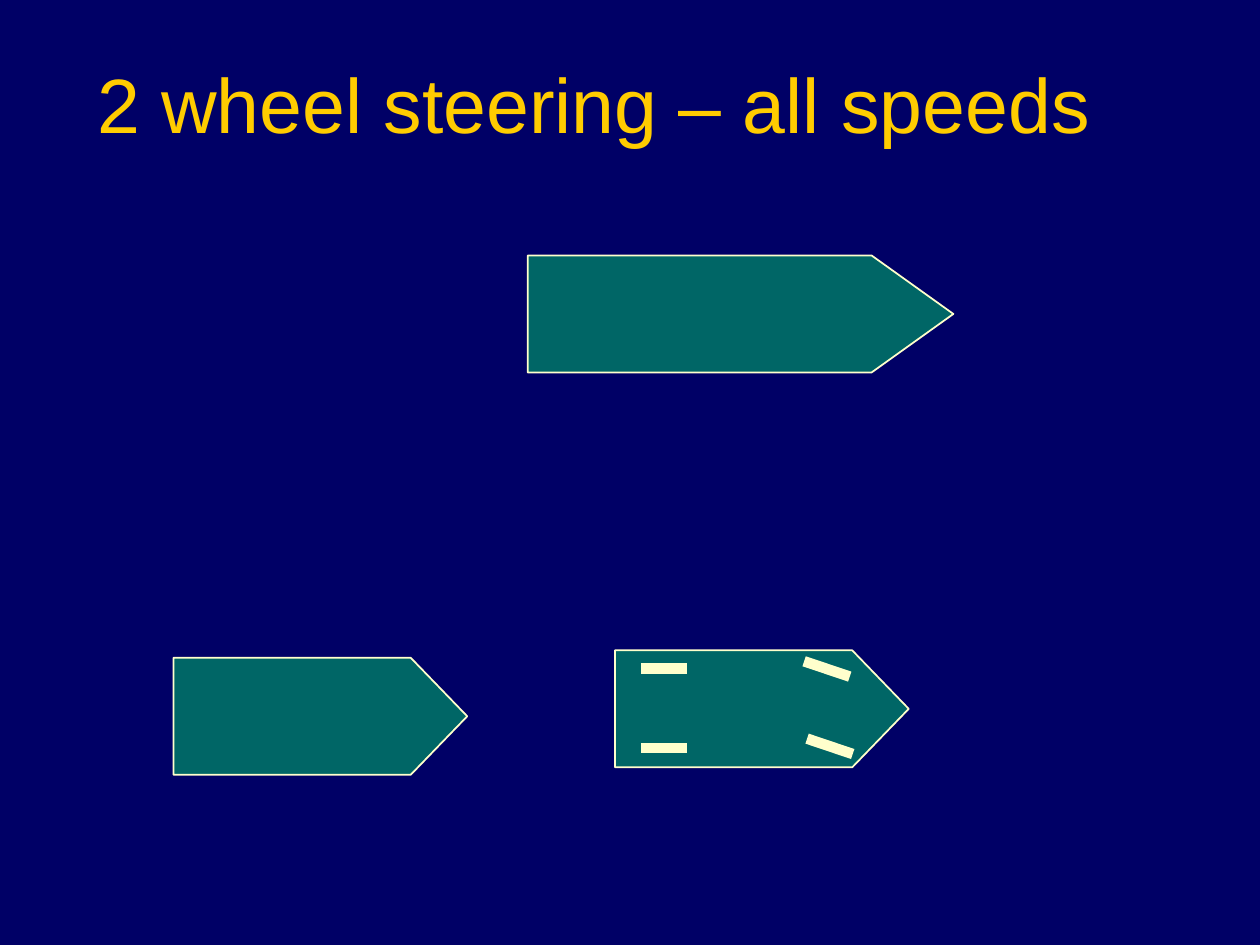
from lxml.etree import SubElement
from pptx import Presentation
from pptx.dml.color import RGBColor
from pptx.enum.shapes import MSO_CONNECTOR, MSO_SHAPE
from pptx.enum.text import MSO_ANCHOR, PP_ALIGN
from pptx.oxml import parse_xml
from pptx.oxml.ns import nsdecls, qn
from pptx.util import Cm, Pt

NAVY, TEAL, CREAM, GOLD = "000066", "006666", "FFFFCC", "FFCC00"
BODY_H = 2.36


def set_color(fill, value):
    fill.solid()
    fill.fore_color.rgb = RGBColor.from_string(value)


def add_title(s, text):
    title = s.shapes.title
    title.left, title.top, title.width, title.height = Cm(0), Cm(0.48), Cm(22.25), Cm(3.18)
    tf = title.text_frame
    tf.word_wrap = True
    tf.vertical_anchor = MSO_ANCHOR.MIDDLE
    p = tf.paragraphs[0]
    p.alignment = PP_ALIGN.RIGHT
    r = p.add_run()
    r.text = text
    r.font.size = Pt(44)
    r.font.name = "Arial"
    set_color(r.font.fill, GOLD)
    shadow = parse_xml(
        f'<a:effectLst {nsdecls("a")}><a:outerShdw dist="35921" dir="2700000">'
        '<a:srgbClr val="000000"/></a:outerShdw></a:effectLst>')
    r.font._element.find(qn("a:solidFill")).addnext(shadow)


def add_body(shapes, x, y, w, point):
    sp = shapes.add_shape(MSO_SHAPE.PENTAGON, Cm(x), Cm(y), Cm(w), Cm(BODY_H))
    sp.adjustments[0] = point
    sp.shadow.inherit = False
    set_color(sp.fill, TEAL)
    set_color(sp.line.fill, CREAM)
    sp.line.width = Pt(1)


def add_wheel(shapes, x, y, drop=0):
    wheel = shapes.add_connector(
        MSO_CONNECTOR.STRAIGHT, Cm(x), Cm(y), Cm(x + 0.92), Cm(y + drop))
    set_color(wheel.line.fill, CREAM)
    wheel.line.width = Pt(6)
    SubElement(wheel._element.spPr, qn("a:effectLst"))


def add_steered_car(s, x, y):
    car = s.shapes.add_group_shape().shapes
    add_body(car, x, y, 5.92, 0.483)
    for dx, dy, drop in ((0.52, 0.37, 0), (0.52, 1.97, 0),
                         (3.81, 0.22, 0.31), (3.87, 1.78, 0.31)):
        add_wheel(car, x + dx, y + dy, drop)


def main():
    prs = Presentation()
    prs.slide_width, prs.slide_height = Cm(25.4), Cm(19.05)
    s = prs.slides.add_slide(prs.slide_layouts[5])
    set_color(s.background.fill, NAVY)
    add_title(s, "2 wheel steering – all speeds")
    add_steered_car(s, 12.4, 13.11)
    add_body(s.shapes, 3.5, 13.26, 5.92, 0.483)
    add_body(s.shapes, 10.64, 5.15, 8.58, 0.699)
    prs.save("out.pptx")


if __name__ == "__main__":
    main()
